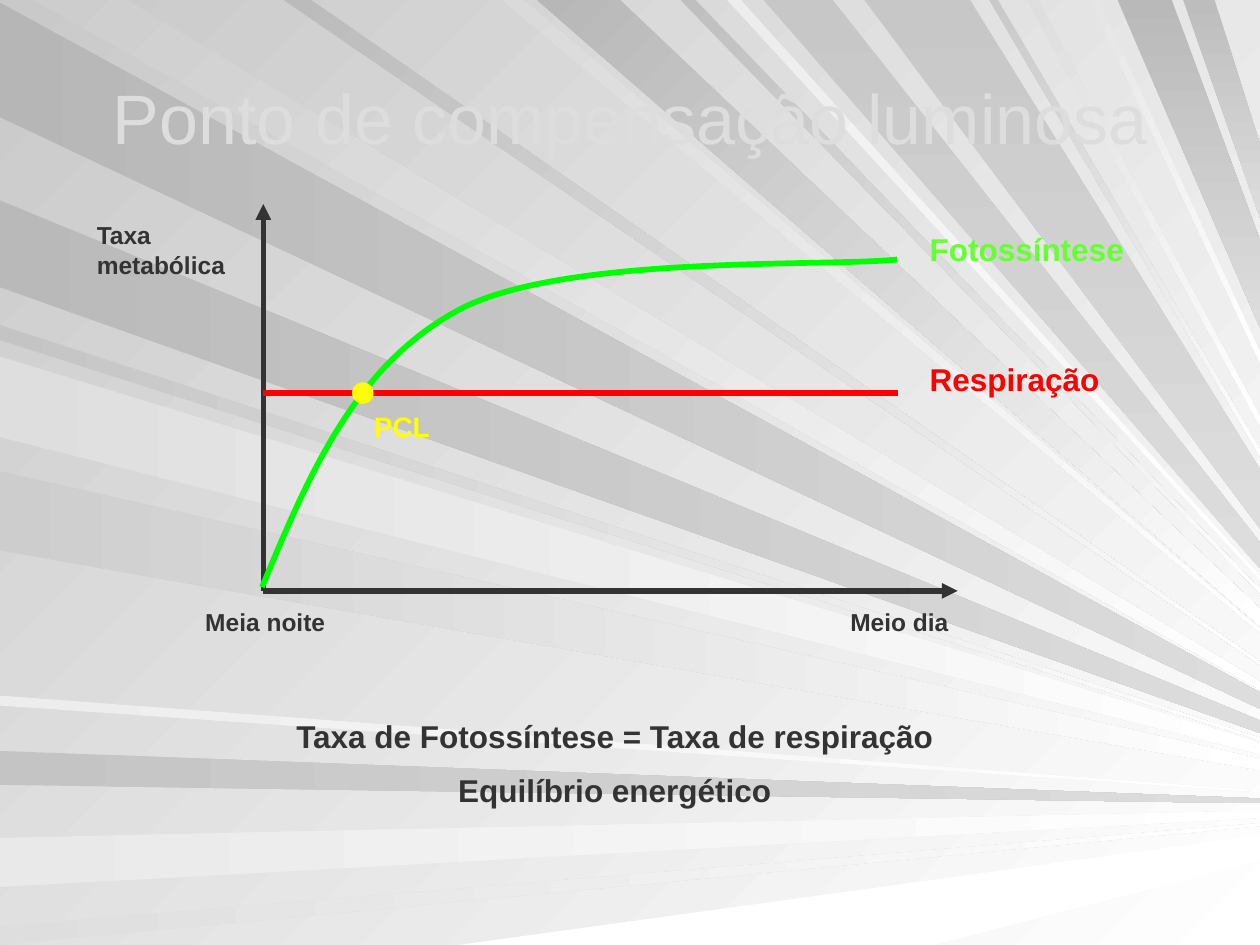
import pptx
import pptx.dml.color
import pptx.enum.shapes
import pptx.enum.text
import pptx.oxml.ns
import pptx.util
from lxml import etree
from pptx.util import Inches

COLORS = {
    "white": "FFFFFF",
    "silver": "DDDDDD",
    "ink": "333333",
    "red": "FF0000",
    "green": "00FF00",
    "lime": "66FF33",
    "yellow": "FFFF00",
}

FOCUS = (11.65, 6.4)

# Each ray: end colour, first and last place on its edge, start shade in percent
RAYS = {
    "left": [
        ("silver", 0.02, 0.93, 64),
        ("silver", 5.96, 6.23, 76),
        ("white", 6.65, 7.04, 82),
        ("white", 7.35, 7.5, 73),
        ("white", 2.58, 2.7, 55),
        ("silver", 1.59, 2.28, 67),
        ("white", 3.74, 4.37, 61),
        ("white", 5.52, 5.6, 85),
        ("white", 2.83, 3.47, 73),
    ],
    "bottom": [("white", 3.64, 7.42, 100)],
    "top": [
        ("white", 0.26, 1.01, 61),
        ("white", 2.25, 2.47, 49),
        ("white", 3.98, 4.16, 70),
        ("white", 4.26, 4.92, 47),
        ("white", 5.4, 5.52, 52),
        ("white", 5.77, 5.88, 85),
        ("silver", 6.06, 6.61, 79),
        ("silver", 6.86, 7.7, 79),
        ("white", 7.85, 7.92, 58),
        ("white", 8.15, 8.24, 73),
        ("white", 8.65, 8.72, 79),
        ("silver", 8.87, 9.3, 67),
        ("silver", 9.39, 9.64, 70),
    ],
}


def rgb(name):
    return pptx.dml.color.RGBColor.from_string(COLORS[name])


def add_element(parent, tag, **attributes):
    return etree.SubElement(parent, pptx.oxml.ns.qn(tag), **attributes)


def fill_gradient(fill, element, color, shade, angle):
    fill.gradient()
    fill.gradient_angle = (360 - angle) % 360
    for stop in fill.gradient_stops:
        stop.color.rgb = rgb(color)
    start = next(element.iter(pptx.oxml.ns.qn("a:srgbClr")))
    add_element(start, "a:shade", val=str(shade * 1000))


def add_outline(page, box, points, close):
    left, top = box[:2]
    corners = [(left + Inches(x), top + Inches(y)) for x, y in points]
    builder = page.shapes.build_freeform(*corners[0], scale=1.0)
    builder.add_line_segments(corners[1:], close=close)
    shape = builder.convert_to_shape()
    shape.shadow.inherit = False
    return shape


def add_text(page, box, text, size=14, color="ink", bold=True, align="LEFT", anchor="TOP", gap=0):
    frame = page.shapes.add_textbox(*box).text_frame
    frame.word_wrap = True
    frame.vertical_anchor = getattr(pptx.enum.text.MSO_ANCHOR, anchor)
    for index, line in enumerate(text.split("\n")):
        para = frame.add_paragraph() if index else frame.paragraphs[0]
        para.alignment = getattr(pptx.enum.text.PP_ALIGN, align)
        if index:
            para.space_before = pptx.util.Pt(gap)
        span = para.add_run()
        span.text = line
        span.font.name = "Arial"
        span.font.size = pptx.util.Pt(size)
        span.font.bold = bold
        span.font.color.rgb = rgb(color)


def add_line(page, box, start, end, color, arrow=None):
    left, top = box[:2]
    line = page.shapes.add_connector(
        pptx.enum.shapes.MSO_CONNECTOR.STRAIGHT,
        left + Inches(start[0]), top + Inches(start[1]),
        left + Inches(end[0]), top + Inches(end[1]))
    line.line.color.rgb = rgb(color)
    line.line.width = pptx.util.Pt(3)
    if arrow:
        add_element(line.line._get_or_add_ln(), arrow, type="triangle")
    add_element(line.element.spPr, "a:effectLst")


def add_curve(page, box, points, color, width):
    curve = add_outline(page, box, points, close=False)
    curve.fill.background()
    curve.line.color.rgb = rgb(color)
    curve.line.width = pptx.util.Pt(width)
    outline = next(curve.element.iter(pptx.oxml.ns.qn("a:path")))
    segments = outline.findall(pptx.oxml.ns.qn("a:lnTo"))
    for first in range(0, len(segments), 3):
        bezier = add_element(outline, "a:cubicBezTo")
        for segment in segments[first:first + 3]:
            bezier.append(segment[0])
            outline.remove(segment)


def add_backdrop(page, box):
    width, height = box[2] / Inches(1), box[3] / Inches(1)
    fill_gradient(page.background.fill, page.element, "white", 58, 45)

    def edge_point(edge, place):
        return {"left": (0, place), "top": (place, 0), "bottom": (place, height)}[edge]

    def far_point(point):
        x, y = point
        return width, y + (FOCUS[1] - y) * (width - x) / (FOCUS[0] - x)

    for edge, rays in RAYS.items():
        for color, first, last, shade in rays:
            start, end = edge_point(edge, first), edge_point(edge, last)
            corners = [start, end, far_point(end), far_point(start)]
            ray = add_outline(page, box, corners, close=True)
            ray.line.fill.background()
            angle = 0 if edge != "top" else 90 if color == "silver" else 45
            fill_gradient(ray.fill, ray.element, color, shade, angle)


def add_rate_graph(page, box):
    left, top = box[:2]
    origin = (1.42, 3.07)
    add_line(page, box, (origin[0], 0), origin, "ink", "a:headEnd")
    add_line(page, box, origin, (6.93, origin[1]), "ink", "a:tailEnd")
    add_line(page, box, (origin[0], 1.5), (6.46, 1.5), "red")
    add_curve(page, box, [(1.41, 3.04), (1.78, 2.15), (2.15, 1.27), (2.99, 0.83),
                          (3.83, 0.4), (5.88, 0.5), (6.45, 0.44)], "green", 3.25)

    dot = page.shapes.add_shape(
        pptx.enum.shapes.MSO_SHAPE.OVAL,
        left + Inches(2.13), top + Inches(1.42), Inches(0.16), Inches(0.16))
    dot.shadow.inherit = False
    dot.fill.solid()
    dot.fill.fore_color.rgb = rgb("yellow")
    dot.line.color.rgb = rgb("yellow")
    dot.line.width = pptx.util.Pt(0.75)

    labels = [
        ("PCL", 2.2, 1.58, 0.94, 0.37, 16, "yellow"),
        ("Respiração", 6.61, 1.19, 1.89, 0.4, 18, "red"),
        ("Fotossíntese", 6.61, 0.16, 2.05, 0.4, 18, "lime"),
        ("Taxa metabólica", 0, 0.08, 1.34, 0.57, 14, "ink"),
        ("Meio dia", 5.98, 3.15, 1.58, 0.33, 14, "ink"),
        ("Meia noite", 0.86, 3.15, 1.58, 0.33, 14, "ink"),
    ]
    for text, x, y, width, height, size, color in labels:
        place = (left + Inches(x), top + Inches(y), Inches(width), Inches(height))
        add_text(page, place, text, size=size, color=color)


def add_title(page, box):
    add_text(page, box, "Ponto de compensação luminosa", size=40, color="silver",
             bold=False, align="CENTER", anchor="MIDDLE")


def add_conclusion(page, box):
    add_text(page, box, "Taxa de Fotossíntese = Taxa de respiração\nEquilíbrio energético",
             size=18, align="CENTER", gap=9.5)


def main():
    deck = pptx.Presentation()
    deck.slide_width, deck.slide_height = Inches(10), Inches(7.5)
    page = deck.slides.add_slide(deck.slide_layouts[6])
    add_backdrop(page, (0, 0, deck.slide_width, deck.slide_height))
    add_title(page, (Inches(0.5), Inches(0.3), Inches(9), Inches(1.25)))
    add_rate_graph(page, (Inches(0.67), Inches(1.62), Inches(8.66), Inches(3.48)))
    add_conclusion(page, (Inches(1.06), Inches(5.64), Inches(7.64), Inches(0.85)))
    deck.save("out.pptx")


if __name__ == "__main__":
    main()
